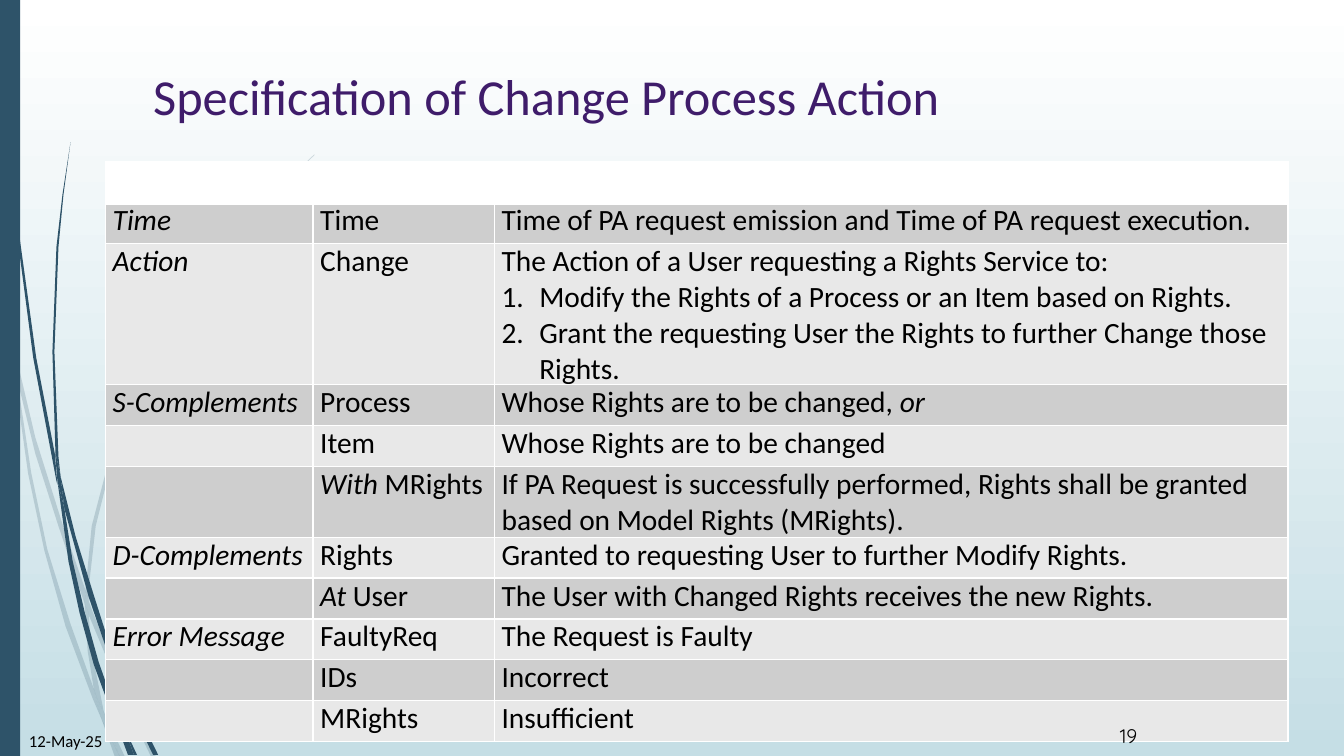
from dataclasses import dataclass

from lxml import etree
from pptx import Presentation
from pptx import util as u
from pptx.dml.color import RGBColor
from pptx.enum import shapes, text
from pptx.oxml import ns


@dataclass(frozen=True)
class Theme:
    accent: str = "2E5369"
    title: str = "3F1C6A"
    ink: str = "000000"
    white: str = "FFFFFF"
    sky: str = "C5DEE5"
    bands: tuple = ("E8E8E8", "CECECE")
    body_font: str = "Calibri"
    number_font: str = "Quicksand"
    title_size: int = 36
    table_size: int = 21
    date_size: int = 12
    number_size: int = 14


T = Theme()

PALE_WISPS = [
    [(11, 350), (9, 322), (0, 282), (0, 299), (10, 344)],
    [(17, 376), (35, 450), (58, 522), (84, 599), (85, 586), (62, 520), (35, 434), (14, 345)],
    [(88, 610), (123, 694), (150, 751), (155, 751), (127, 692), (92, 607), (88, 596)],
    [(105, 711), (119, 751), (124, 751)],
    [(11, 350), (28, 470), (44, 546), (65, 621), (92, 693), (101, 714), (99, 707),
     (93, 683), (70, 619), (47, 545), (31, 469), (17, 376)],
    [(84, 599), (87, 646), (93, 683), (96, 692), (105, 711), (103, 706), (91, 646),
     (88, 610), (88, 608)],
    [(88, 584), (95, 522), (110, 462), (160, 349), (229, 245), (268, 198), (290, 175),
     (312, 154), (312, 153), (289, 175), (268, 197), (228, 244), (158, 348), (107, 461),
     (91, 522), (85, 584), (85, 586), (88, 596)],
    [(101, 714), (114, 751), (119, 751)],
    [(84, 599), (88, 608), (88, 610), (88, 596), (85, 586)],
    [(93, 683), (99, 707), (101, 714), (119, 751), (105, 711), (96, 692)],
]
DARK_WISPS = [
    [(3, 0), (4, 48), (7, 110), (17, 233), (33, 355), (56, 477), (57, 481), (55, 457),
     (55, 453), (36, 355), (19, 232), (8, 109), (5, 48), (4, 0)],
    [(64, 505), (88, 592), (106, 645), (106, 633), (106, 631), (93, 590), (75, 532), (60, 472)],
    [(111, 656), (132, 708), (152, 749), (157, 749), (136, 706), (113, 649), (110, 641)],
    [(57, 477), (68, 557), (79, 608), (93, 659), (111, 708), (117, 722), (116, 717),
     (110, 691), (98, 657), (84, 607), (72, 556), (64, 505)],
    [(60, 472), (58, 453), (54, 349), (58, 245), (63, 193), (70, 141), (62, 193),
     (56, 245), (52, 349), (55, 449)],
    [(122, 719), (133, 749), (136, 749)],
    [(55, 449), (55, 453), (57, 477), (64, 505), (60, 472)],
    [(111, 633), (125, 552), (158, 476), (205, 406), (231, 374), (245, 359), (261, 344),
     (260, 344), (245, 358), (231, 373), (204, 405), (156, 474), (122, 551), (106, 631),
     (110, 641)],
    [(117, 722), (127, 749), (131, 749)],
    [(106, 645), (110, 691), (116, 706), (122, 719), (121, 716), (111, 656), (109, 651)],
    [(106, 645), (109, 651), (111, 656), (110, 641), (106, 631), (106, 633)],
    [(110, 691), (116, 717), (117, 722), (130, 749), (133, 749), (122, 719), (116, 706)],
]

ROWS = [
    ("", "", ""),
    ("*Time*", "Time", "Time of PA request emission and Time of PA request execution."),
    ("*Action*", "Change", "The Action of a User requesting a Rights Service to:\n"
     "# Modify the Rights of a Process or an Item based on Rights.\n"
     "# Grant the requesting User the Rights to further Change those Rights."),
    ("*S-Complements*", "Process", "Whose Rights are to be changed, *or*"),
    ("", "Item", "Whose Rights are to be changed"),
    ("", "*With *MRights", "If PA Request is successfully performed, Rights shall be "
     "granted based on Model Rights (MRights)."),
    ("*D-Complements*", "Rights", "Granted to requesting User to further Modify Rights."),
    ("", "*At* User", "The User with Changed Rights receives the new Rights."),
    ("*Error Message*", "FaultyReq", "The Request is Faulty"),
    ("", "IDs", "Incorrect"),
    ("", "MRights", "Insufficient"),
]
COL_WIDTHS = (5.23, 4.57, 20)
ROW_HEIGHT = 1.03


def rgb(value):
    return RGBColor.from_string(value)


def set_values(obj, values):
    for name, value in values.items():
        setattr(obj, name, value)


def set_font(font, size, color=T.ink, name=T.body_font, italic=False):
    set_values(font, {"size": u.Pt(size), "name": name, "italic": italic})
    font.color.rgb = rgb(color)


def sub(parent, tag, **attrs):
    return etree.SubElement(parent, ns.qn(tag), attrs)


def paint(sp, color, alpha=None):
    sp.shadow.inherit = False
    sp.fill.solid()
    sp.fill.fore_color.rgb = rgb(color)
    sp.line.fill.background()
    if alpha:
        clr = sp._element.spPr.find(".//" + ns.qn("a:srgbClr"))
        sub(clr, "a:alpha", val=str(alpha * 1000))


def add_wisp(s, outline, alpha=None):
    start, *rest = outline
    fb = s.shapes.build_freeform(*start, scale=u.Cm(2.54) / 100)
    fb.add_line_segments(rest, close=True)
    paint(fb.convert_to_shape(), T.accent, alpha)


def add_label(s, words, box, top=0.13, **font):
    tf = s.shapes.add_textbox(*map(u.Cm, box)).text_frame
    set_values(tf, {"word_wrap": True, "margin_top": u.Cm(top),
                    "vertical_anchor": text.MSO_ANCHOR.TOP})
    r = tf.paragraphs[0].add_run()
    r.text = words
    set_font(r.font, **font)


def fill_paragraph(p, words):
    if words.startswith("# "):
        words = words[2:]
        pPr = p._p.get_or_add_pPr()
        for name, indent in {"marL": 0.95, "indent": -0.95}.items():
            pPr.set(name, str(u.Cm(indent)))
        sub(pPr, "a:buFont", typeface="+mj-lt")
        sub(pPr, "a:buAutoNum", type="arabicPeriod")
    for i, part in enumerate(words.split("*")):
        if part:
            r = p.add_run()
            r.text = part
            set_font(r.font, T.table_size, italic=i % 2 == 1)


def add_borders(cell, widths):
    tcPr = cell._tc.get_or_add_tcPr()
    for side, width in zip("LRTB", widths):
        ln = sub(tcPr, "a:ln" + side, w=str(u.Pt(width)))
        sub(sub(ln, "a:solidFill"), "a:srgbClr", val=T.white)


def add_spec_table(s):
    frame = (2.66, 4.08, sum(COL_WIDTHS), ROW_HEIGHT * len(ROWS))
    gf = s.shapes.add_table(len(ROWS), len(COL_WIDTHS), *map(u.Cm, frame))
    tbl = gf.table
    for col, width in zip(tbl.columns, COL_WIDTHS):
        col.width = u.Cm(width)
    for i, (row, values) in enumerate(zip(tbl.rows, ROWS)):
        row.height = u.Cm(ROW_HEIGHT)
        for cell, value in zip(row.cells, values):
            add_borders(cell, (1, 1, 3 if i == 1 else 1, 3 if i == 0 else 1))
            set_values(cell, {"margin_left": u.Cm(0.18), "margin_right": u.Cm(0.18),
                              "margin_top": 0, "margin_bottom": 0})
            cell.fill.solid()
            cell.fill.fore_color.rgb = rgb(T.bands[i % 2] if i else T.white)
            tf = cell.text_frame
            for j, words in enumerate(value.split("\n")):
                fill_paragraph(tf.add_paragraph() if j else tf.paragraphs[0], words)
    gf.height = u.Cm(14.6)


def add_backdrop(s):
    fill = s.background.fill
    fill.gradient()
    fill.gradient_angle = 270
    for stop, color, pos in zip(fill.gradient_stops, (T.white, T.sky), (0, 1)):
        stop.color.rgb = rgb(color)
        stop.position = pos
    for outline in PALE_WISPS:
        add_wisp(s, outline, 20)
    for outline in DARK_WISPS:
        add_wisp(s, outline)
    bar = (0, 0, 0.51, 19.05)
    paint(s.shapes.add_shape(shapes.MSO_SHAPE.RECTANGLE, *map(u.Cm, bar)), T.accent)


def main():
    prs = Presentation()
    set_values(prs, {"slide_width": u.Cm(33.87), "slide_height": u.Cm(19.05)})
    s = prs.slides.add_slide(prs.slide_layouts[6])
    add_backdrop(s)
    add_label(s, "Specification of Change Process Action", (3.61, 1.5, 28.35, 2.57),
              size=T.title_size, color=T.title)
    add_spec_table(s)
    add_label(s, "12-May-25", (0.48, 18.29, 2.77, 1.02), size=T.date_size)
    add_label(s, "19", (27.97, 18.24, 1.55, 0.13), top=0,
              size=T.number_size, name=T.number_font)
    prs.save("out.pptx")


if __name__ == "__main__":
    main()
